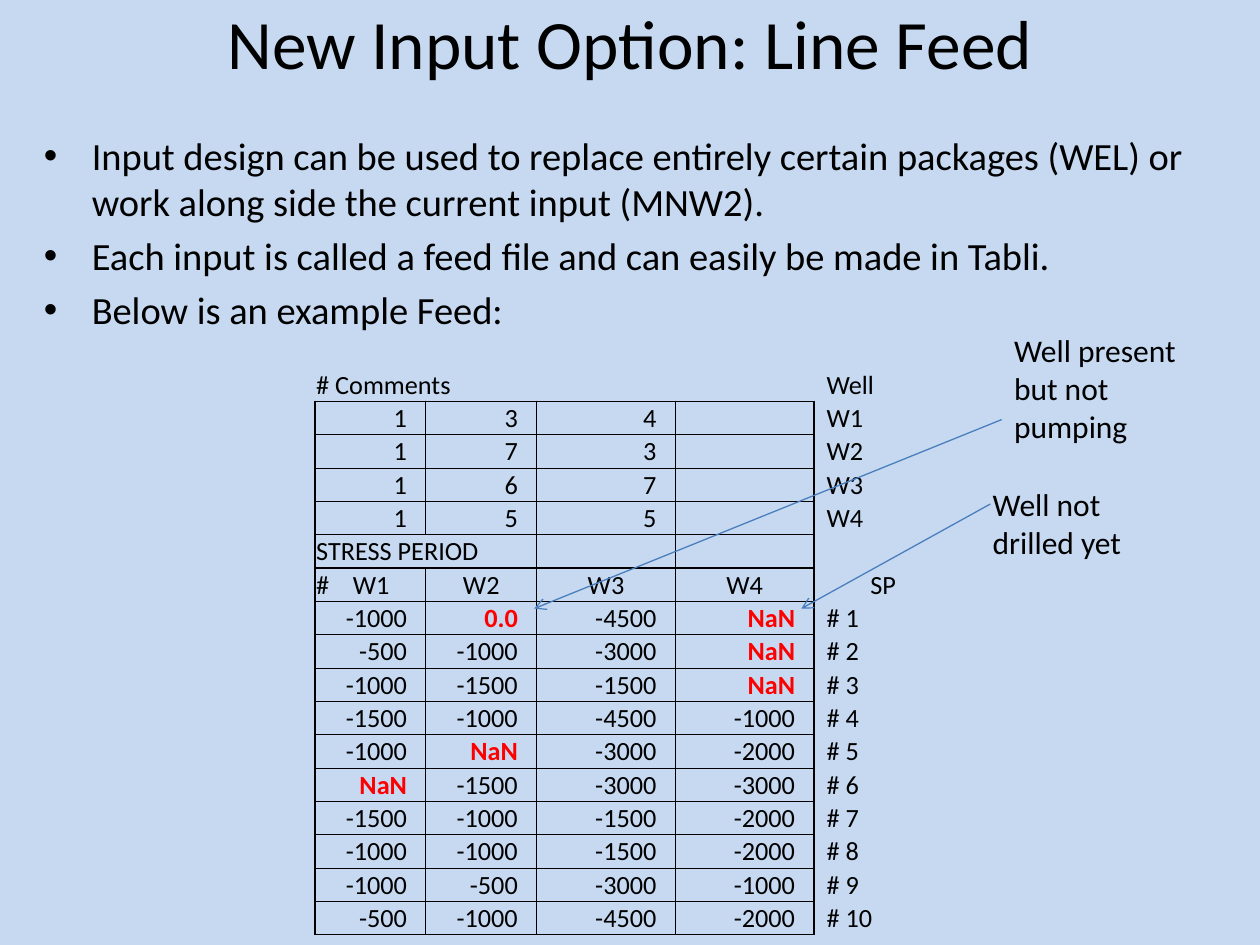
from lxml.etree import SubElement
from pptx import Presentation
from pptx.dml.color import RGBColor
from pptx.enum.shapes import MSO_CONNECTOR
from pptx.enum.text import MSO_ANCHOR, PP_ALIGN
from pptx.oxml.ns import qn
from pptx.util import Inches, Pt


def color(value):
    return RGBColor.from_string(value)


def add_span(para, text, size, ink="000000", bold=False):
    span = para.add_run()
    span.text = text
    span.font.name = "Calibri"
    span.font.size = Pt(size)
    span.font.bold = bold
    span.font.color.rgb = color(ink)


deck = Presentation()
deck.slide_width, deck.slide_height = Inches(10), Inches(7.5)
page = deck.slides.add_slide(deck.slide_layouts[6])
page.background.fill.solid()
page.background.fill.fore_color.rgb = color("C6D9F1")

# Title
box = page.shapes.add_textbox(Inches(0.5), Inches(0), Inches(9), Inches(1.25))
box.text_frame.word_wrap = True
box.text_frame.margin_top = Inches(0)
para = box.text_frame.paragraphs[0]
para.alignment = PP_ALIGN.CENTER
add_span(para, "New Input Option: Line Feed", 39.6)

# Bullet list
bullets = [
    "Input design can be used to replace entirely certain packages (WEL) or "
    "work along side the current input (MNW2).",
    "Each input is called a feed file and can easily be made in Tabli.",
    "Below is an example Feed:",
]
box = page.shapes.add_textbox(Inches(0.25), Inches(1), Inches(9.75), Inches(5.7))
box.text_frame.word_wrap = True
for index, text in enumerate(bullets):
    para = box.text_frame.add_paragraph() if index else box.text_frame.paragraphs[0]
    if index:
        para.space_before = Pt(4.4)
    properties = para._p.get_or_add_pPr()
    properties.set("marL", str(Inches(0.38)))
    properties.set("indent", str(-Inches(0.38)))
    SubElement(properties, qn("a:buFont"), typeface="Arial")
    SubElement(properties, qn("a:buChar"), char="•")
    add_span(para, text, 22)

# Feed file contents: well locations, then pumping per stress period
wells = [(1, 3, 4), (1, 7, 3), (1, 6, 7), (1, 5, 5)]
pumping = [
    ("-1000", "0.0", "-4500", "NaN"),
    ("-500", "-1000", "-3000", "NaN"),
    ("-1000", "-1500", "-1500", "NaN"),
    ("-1500", "-1000", "-4500", "-1000"),
    ("-1000", "NaN", "-3000", "-2000"),
    ("NaN", "-1500", "-3000", "-3000"),
    ("-1500", "-1000", "-1500", "-2000"),
    ("-1000", "-1000", "-1500", "-2000"),
    ("-1000", "-500", "-3000", "-1000"),
    ("-500", "-1000", "-4500", "-2000"),
]
rows = [("# Comments", "", "", "", "Well")]
rows += [(*map(str, well), "", f"W{number}") for number, well in enumerate(wells, 1)]
period_row = len(rows)
rows.append(("STRESS PERIOD", "", "", "", ""))
header_row = len(rows)
rows.append(("#\tW1", "W2", "W3", "W4", "SP"))
rows += [(*rates, f"# {number}") for number, rates in enumerate(pumping, 1)]
label_column = 4
heavy_edges = (1, period_row, header_row, len(rows))

# Table
widths = [0.88, 0.88, 1.1, 1.1, 1.1]
table = page.shapes.add_table(
    len(rows), len(widths), Inches(2.5), Inches(2.92), Inches(sum(widths)), Inches(4.5)
).table
table.first_row = table.horz_banding = False
for column, width in zip(table.columns, widths):
    column.width = Inches(width)
for row in table.rows:
    row.height = Inches(4.5 / len(rows))
for merged_row in (0, period_row):
    table.cell(merged_row, 0).merge(table.cell(merged_row, 1))

for row, texts in enumerate(rows):
    for column, text in enumerate(texts):
        cell = table.cell(row, column)
        is_label = column == label_column
        is_number = not is_label and row not in (0, period_row, header_row)
        cell.vertical_anchor = MSO_ANCHOR.MIDDLE if is_number and row > header_row else MSO_ANCHOR.BOTTOM
        cell.margin_left = Inches(0.1 if is_label and row != header_row else 0.01)
        cell.margin_right = Inches(0.15 if is_number else 0.01)
        cell.margin_top, cell.margin_bottom = Inches(0.01), Inches(0)

        para = cell.text_frame.paragraphs[0]
        if is_number:
            para.alignment = PP_ALIGN.RIGHT
        elif row == header_row and column:
            para.alignment = PP_ALIGN.CENTER
        if "\t" in text:
            tabs = SubElement(para._p.get_or_add_pPr(), qn("a:tabLst"))
            SubElement(tabs, qn("a:tab"), pos=str(Inches(0.29)), algn="l")
        if text:
            special = text in ("NaN", "0.0")
            add_span(para, text, 15, "FF0000" if special else "000000", special)
        else:
            SubElement(para._p, qn("a:endParaRPr"), sz="1500")

        # Borders: heavy frame and section rules, thin grid, open outside
        edges = {"lnL": 0, "lnR": 0, "lnT": 0, "lnB": 0}
        if row and is_label:
            edges["lnL"] = 1
        elif row:
            edges["lnL"] = 0.5 if column else 1
            edges["lnR"] = 1 if column == label_column - 1 else 0.5
            edges["lnT"] = 1 if row in heavy_edges else 0.5
            edges["lnB"] = 1 if row + 1 in heavy_edges else 0.5
        elif not is_label:
            edges["lnB"] = 1
        for side, weight in edges.items():
            line = SubElement(cell._tc.get_or_add_tcPr(), qn(f"a:{side}"), w=str(Pt(weight)))
            if weight:
                fill = SubElement(line, qn("a:solidFill"))
                SubElement(fill, qn("a:srgbClr"), val="000000")
            else:
                SubElement(line, qn("a:noFill"))
        cell.fill.background()

# Callouts with arrows into the table
callouts = [
    ("Well not drilled yet", (7.78, 3.8, 1.25, 0.71), (7.86, 4, 6.36, 4.83)),
    ("Well present but not pumping", (7.95, 2.58, 1.67, 1.01), (7.95, 3.33, 4.24, 4.83)),
]
for text, place, ends in callouts:
    arrow = page.shapes.add_connector(MSO_CONNECTOR.STRAIGHT, *map(Inches, ends))
    arrow.line.color.rgb = color("4B7EBC")
    arrow.line.width = Pt(0.75)
    SubElement(arrow.line._get_or_add_ln(), qn("a:tailEnd"), type="arrow")
    SubElement(arrow._element.spPr, qn("a:effectLst"))
    box = page.shapes.add_textbox(*map(Inches, place))
    box.text_frame.word_wrap = True
    add_span(box.text_frame.paragraphs[0], text, 18)

deck.save("out.pptx")
